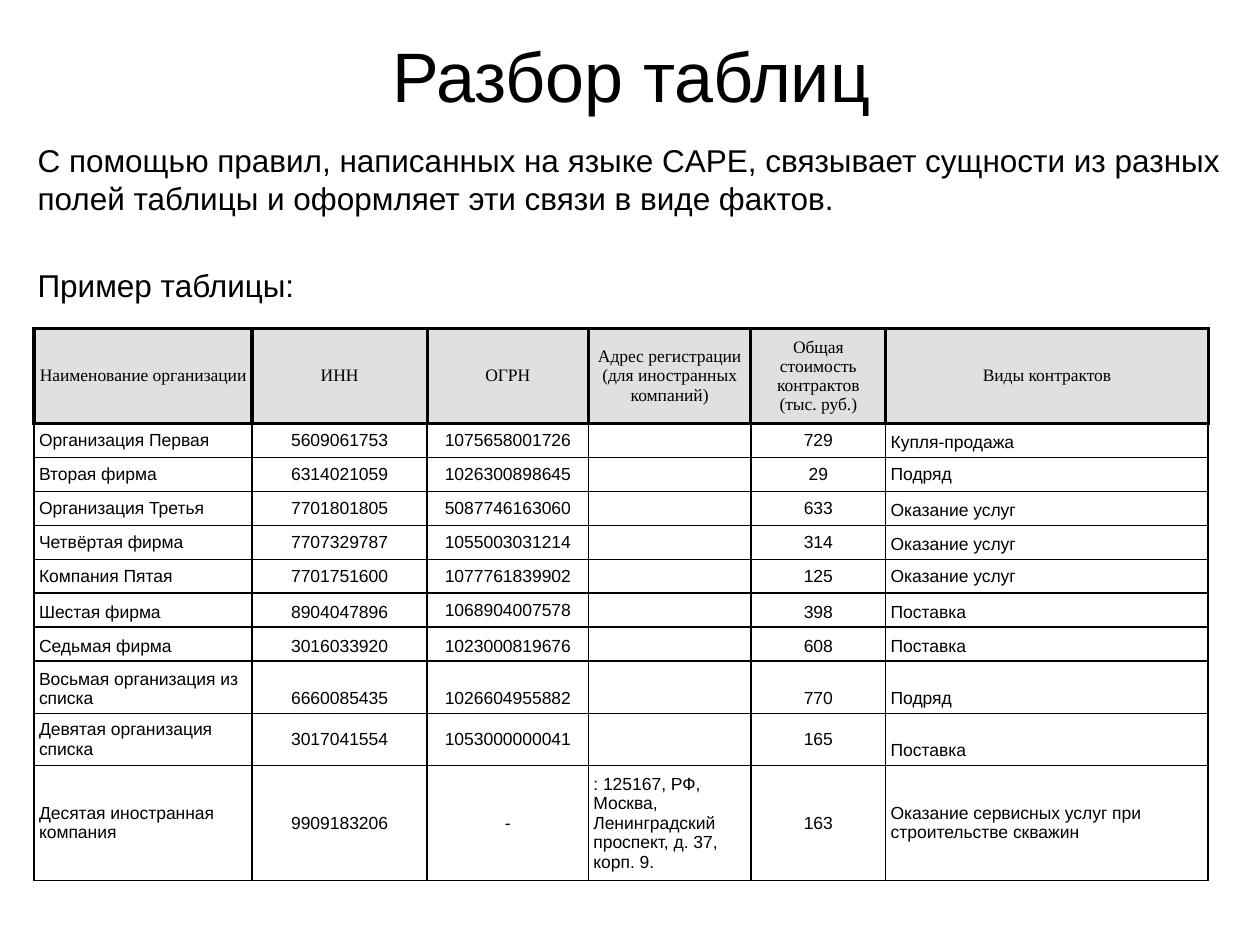
import dataclasses

import pptx
import pptx.dml.color
import pptx.enum.text
import pptx.oxml
import pptx.oxml.ns
import pptx.util
from pptx.util import Inches

ALIGN = pptx.enum.text.PP_ALIGN
ANCHOR = pptx.enum.text.MSO_ANCHOR


@dataclasses.dataclass(frozen=True)
class Theme:
    """Colours, fonts, type sizes and line widths of the slide."""
    ink: str = "000000"
    rule: str = "010000"
    header_fill: str = "E0E0E0"
    sans: str = "Arial"
    serif: str = "Times New Roman"
    title: int = 40
    body: int = 18
    cell: int = 10
    thick: int = 2
    thin: int = 1


THEME = Theme()

COLUMNS = [1.73, 1.39, 1.28, 1.29, 1.07, 2.56]
ROW_HEIGHTS = [0.75] + [0.27] * 7 + [0.41, 0.41, 0.91]
HEADERS = [
    "Наименование организации",
    "ИНН",
    "ОГРН",
    "Адрес регистрации (для иностранных компаний)",
    "Общая стоимость контрактов\n(тыс. руб.)",
    "Виды контрактов",
]
CONTRACTS = [
    ("Организация Первая", "5609061753", "1075658001726", "", "729", "Купля-продажа"),
    ("Вторая фирма", "6314021059", "1026300898645", "", "29", "Подряд"),
    ("Организация Третья", "7701801805", "5087746163060", "", "633", "Оказание услуг"),
    ("Четвёртая фирма", "7707329787", "1055003031214", "", "314", "Оказание услуг"),
    ("Компания Пятая", "7701751600", "1077761839902", "", "125", "Оказание услуг"),
    ("Шестая фирма", "8904047896", "1068904007578", "", "398", "Поставка"),
    ("Седьмая фирма", "3016033920", "1023000819676", "", "608", "Поставка"),
    ("Восьмая организация из списка", "6660085435", "1026604955882", "", "770", "Подряд"),
    ("Девятая организация списка", "3017041554", "1053000000041", "", "165", "Поставка"),
    ("Десятая иностранная компания", "9909183206", "-",
     ": 125167, РФ, Москва, Ленинградский проспект, д. 37, корп. 9.", "163",
     "Оказание сервисных услуг при строительстве скважин"),
]
ANCHORS = ["mmmmmb", "mmmmmm", "mmmmmb", "mmmmmb", "mmmmmm",
           "bbmmbb", "bbbmbb", "bbbmbb", "mmmmmb", "mmmmmm"]
ANCHOR_OF = {"m": ANCHOR.MIDDLE, "b": ANCHOR.BOTTOM}
CENTRED_COLUMNS = {1, 2, 4}


def write_text(tf, text, *, size, font=THEME.sans, align=ALIGN.LEFT, before=0):
    """Fill a text frame, one paragraph for each line of the text."""
    for i, line in enumerate(text.split("\n")):
        p = tf.paragraphs[0] if i == 0 else tf.add_paragraph()
        p.alignment = align
        p.space_before = pptx.util.Pt(before)
        target = p.add_run().font if line else p.font
        if line:
            p.runs[0].text = line
        target.size = pptx.util.Pt(size)
        target.name = font
        target.color.rgb = pptx.dml.color.RGBColor.from_string(THEME.ink)


def add_text(s, box, text, *, anchor=ANCHOR.TOP, wrap=True, **style):
    """Add a text box in the given box."""
    sp = s.shapes.add_textbox(*map(Inches, box))
    tf = sp.text_frame
    tf.word_wrap = wrap
    tf.vertical_anchor = anchor
    write_text(tf, text, **style)


def set_border(cell, side, color, width):
    """Draw one side (L, R, T or B) of a cell."""
    ns = pptx.oxml.ns.nsdecls("a")
    cell._tc.get_or_add_tcPr().append(pptx.oxml.parse_xml(
        f'<a:ln{side} {ns} w="{pptx.util.Pt(width)}"><a:solidFill>'
        f'<a:srgbClr val="{color}"/></a:solidFill></a:ln{side}>'))


def format_cell(cell, row, col):
    """Set the margins, borders and fill that a cell's place calls for."""
    cell.margin_left = cell.margin_right = Inches(0.04)
    cell.margin_top = cell.margin_bottom = Inches(0.04)
    header = row == 0
    edge = THEME.thick if header else THEME.thin
    sides = {
        "L": (col == 0, edge),
        "R": (col == len(COLUMNS) - 1, edge),
        "T": (header, THEME.thick if row <= 1 else THEME.thin),
        "B": (row == len(CONTRACTS), edge),
    }
    for side, (outer, width) in sides.items():
        set_border(cell, side, THEME.ink if outer else THEME.rule, width)
    if header:
        cell.fill.solid()
        cell.fill.fore_color.rgb = pptx.dml.color.RGBColor.from_string(THEME.header_fill)
    else:
        cell.fill.background()


def add_contracts(s, box):
    """Add the contracts table in the given box."""
    table = s.shapes.add_table(len(ROW_HEIGHTS), len(COLUMNS), *map(Inches, box)).table
    table.first_row = table.horz_banding = False
    for column, width in zip(table.columns, COLUMNS):
        column.width = Inches(width)
    for row, height in zip(table.rows, ROW_HEIGHTS):
        row.height = Inches(height)
    for i, values in enumerate([HEADERS, *CONTRACTS]):
        for j, value in enumerate(values):
            cell = table.cell(i, j)
            format_cell(cell, i, j)
            cell.vertical_anchor = ANCHOR_OF[ANCHORS[i - 1][j]] if i else ANCHOR.MIDDLE
            centred = i == 0 or j in CENTRED_COLUMNS
            write_text(cell.text_frame, value, size=THEME.cell,
                       font=THEME.sans if i else THEME.serif,
                       align=ALIGN.CENTER if centred else ALIGN.LEFT)


def add_intro(s, box):
    """Add the explanation and the caption of the table."""
    left, top, width, height = box
    add_text(s, (left, top, width, 0.7),
             "С помощью правил, написанных на языке CAPE, связывает сущности из разных "
             "полей таблицы и оформляет эти связи в виде фактов.",
             size=THEME.body, before=3.6)
    add_text(s, (left, top + height - 0.4, 2.25, 0.4), "Пример таблицы:",
             size=THEME.body, wrap=False)


def main():
    """Build and save the slide."""
    prs = pptx.Presentation()
    prs.slide_width, prs.slide_height = Inches(10), Inches(7.5)
    s = prs.slides.add_slide(prs.slide_layouts[6])
    add_text(s, (0.51, 0.21, 9, 0.77), "Разбор таблиц", size=THEME.title,
             align=ALIGN.CENTER, anchor=ANCHOR.MIDDLE)
    add_intro(s, (0.2, 1.07, 9.8, 1.39))
    add_contracts(s, (0.27, 2.61, sum(COLUMNS), sum(ROW_HEIGHTS)))
    prs.save("out.pptx")


if __name__ == "__main__":
    main()
